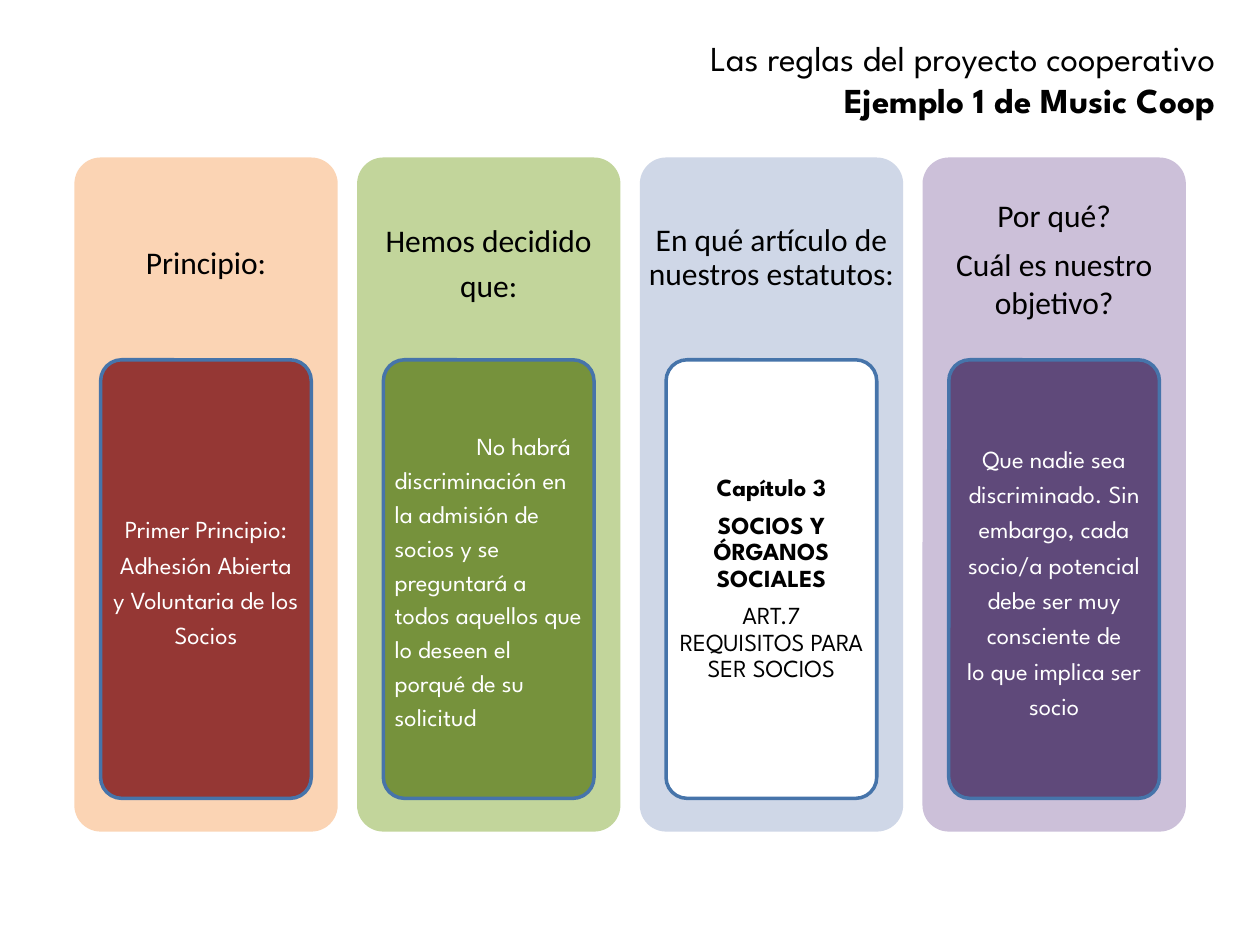
from dataclasses import dataclass

import pptx
import pptx.dml.color
import pptx.enum.shapes
import pptx.enum.text
import pptx.util

Pt = pptx.util.Pt
Align = pptx.enum.text.PP_ALIGN
Anchor = pptx.enum.text.MSO_ANCHOR

COLORS = {
    "black": "000000", "white": "FFFFFF", "outline": "4674AA",
    "peach": "FBD4B4", "red": "953734",
    "light green": "C2D59B", "green": "76923C",
    "light blue": "CFD7E7",
    "lilac": "CCC0D9", "purple": "5F497A",
}
HEADING_FONT = "Calibri"
BODY_FONT = "League Spartan"

COLUMN_LEFT, COLUMN_PITCH = 42.5, 161.55
COLUMN_TOP, COLUMN_WIDTH, COLUMN_HEIGHT = 90, 150.5, 385.2
HEADING_HEIGHT = 115.6
CARD_INDENT, CARD_TOP, CARD_WIDTH, CARD_HEIGHT = 15, 205.6, 120.4, 250.6
CARD_MARGIN = 3.6


@dataclass
class Box:
    left: float
    top: float
    width: float
    height: float

    def lengths(self) -> list:
        return [Pt(value) for value in (self.left, self.top, self.width, self.height)]


@dataclass
class TextStyle:
    font: str
    size: float
    color: str = "black"
    align: Align = Align.CENTER
    line_spacing: float = 1.2
    space_before: float = 0
    first_line: float = 0
    bold_count: int = 0
    inset: tuple = (5, 5)


@dataclass
class Column:
    fill: str
    card_fill: str
    heading: str
    heading_style: TextStyle
    body: str
    body_style: TextStyle


COLUMNS = [
    Column("peach", "red", "Principio:", TextStyle(HEADING_FONT, 18),
           "Primer Principio: Adhesión Abierta y Voluntaria de los Socios",
           TextStyle(BODY_FONT, 14, "white", inset=(3.6, 2.9))),
    Column("light green", "green", "Hemos decidido que:", TextStyle(HEADING_FONT, 18),
           "No habrá discriminación en la admisión de socios y se preguntará a todos "
           "aquellos que lo deseen el porqué de su solicitud",
           TextStyle(BODY_FONT, 14, "white", Align.LEFT, 1.15, first_line=46.8,
                     inset=(2.9, 2.2))),
    Column("light blue", "white", "En qué artículo de nuestros estatutos:",
           TextStyle(HEADING_FONT, 18, line_spacing=0.9),
           "Capítulo 3\nSOCIOS Y ÓRGANOS SOCIALES\nART.7 REQUISITOS PARA SER SOCIOS",
           TextStyle(BODY_FONT, 14, line_spacing=0.9, space_before=6.3, bold_count=2,
                     inset=(3.6, 2.9))),
    Column("lilac", "purple", "Por qué?\nCuál es nuestro objetivo?",
           TextStyle(HEADING_FONT, 18, line_spacing=1.0, space_before=6.3),
           "Que nadie sea discriminado. Sin embargo, cada socio/a potencial debe ser muy "
           "consciente de\nlo que implica ser socio",
           TextStyle(BODY_FONT, 14, "white", inset=(2.9, 2.2))),
]


def rgb(name: str) -> pptx.dml.color.RGBColor:
    return pptx.dml.color.RGBColor.from_string(COLORS[name])


def format_font(font, name: str, size: float, color: str, bold: bool) -> None:
    font.name = name
    font.size = Pt(size)
    font.color.rgb = rgb(color)
    font.bold = bold


def add_panel(slide, box: Box, fill: str, outlined: bool = False) -> None:
    shape = slide.shapes.add_shape(
        pptx.enum.shapes.MSO_SHAPE.ROUNDED_RECTANGLE, *box.lengths())
    shape.adjustments[0] = 0.1
    shape.shadow.inherit = False
    shape.fill.solid()
    shape.fill.fore_color.rgb = rgb(fill)
    if outlined:
        shape.line.color.rgb = rgb("outline")
        shape.line.width = Pt(2)
    else:
        shape.line.fill.background()


def add_text(slide, box: Box, text: str, style: TextStyle) -> None:
    frame = slide.shapes.add_textbox(*box.lengths()).text_frame
    frame.word_wrap = True
    frame.vertical_anchor = Anchor.MIDDLE
    frame.margin_left = frame.margin_right = Pt(style.inset[0])
    frame.margin_top = frame.margin_bottom = Pt(style.inset[1])
    frame.text = text
    for index, paragraph in enumerate(frame.paragraphs):
        paragraph.alignment = style.align
        paragraph.line_spacing = style.line_spacing
        if index:
            paragraph.space_before = Pt(style.space_before)
        if style.first_line:
            properties = paragraph._p.get_or_add_pPr()
            properties.set("marL", "0")
            properties.set("indent", str(Pt(style.first_line)))
        for run in paragraph.runs:
            format_font(run.font, style.font, style.size, style.color,
                        index < style.bold_count)


def add_column(slide, left: float, column: Column) -> None:
    add_panel(slide, Box(left, COLUMN_TOP, COLUMN_WIDTH, COLUMN_HEIGHT), column.fill)
    add_text(slide, Box(left, COLUMN_TOP, COLUMN_WIDTH, HEADING_HEIGHT),
             column.heading, column.heading_style)
    card = Box(left + CARD_INDENT, CARD_TOP, CARD_WIDTH, CARD_HEIGHT)
    add_panel(slide, card, column.card_fill, outlined=True)
    add_text(slide,
             Box(card.left + CARD_MARGIN, card.top + CARD_MARGIN,
                 card.width - 2 * CARD_MARGIN, card.height - 2 * CARD_MARGIN),
             column.body, column.body_style)


def fill_title(slide) -> None:
    title = slide.shapes.title
    title.left, title.top, title.width, title.height = Box(0, 0, 720, 90).lengths()
    frame = title.text_frame
    frame.auto_size = pptx.enum.text.MSO_AUTO_SIZE.NONE
    frame.vertical_anchor = Anchor.MIDDLE
    frame.margin_right = Pt(25.2)
    frame.text = "Las reglas del proyecto cooperativo\nEjemplo 1 de Music Coop"
    for paragraph, bold in zip(frame.paragraphs, (False, True)):
        paragraph.alignment = Align.RIGHT
        for run in paragraph.runs:
            format_font(run.font, BODY_FONT, 20, "black", bold)


def main() -> None:
    presentation = pptx.Presentation()
    presentation.slide_width, presentation.slide_height = Pt(720), Pt(540)
    slide = presentation.slides.add_slide(presentation.slide_layouts[5])
    fill_title(slide)
    for index, column in enumerate(COLUMNS):
        add_column(slide, COLUMN_LEFT + index * COLUMN_PITCH, column)
    presentation.save("out.pptx")


if __name__ == "__main__":
    main()
